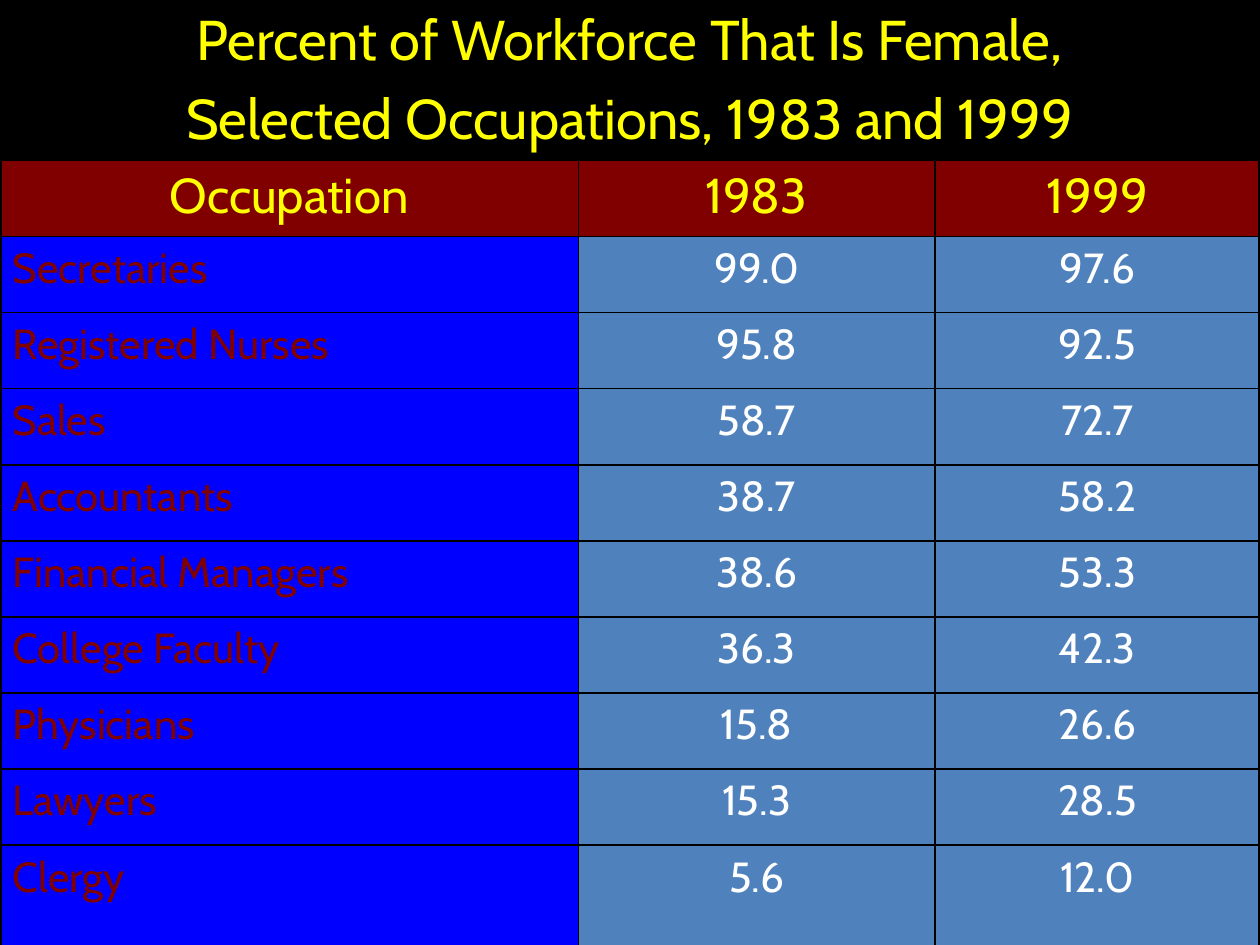
from lxml.etree import SubElement
from pptx import Presentation
from pptx.dml.color import RGBColor
from pptx.enum.text import PP_ALIGN
from pptx.oxml.ns import qn
from pptx.util import Inches, Pt

BLACK = RGBColor(0x00, 0x00, 0x00)
YELLOW = RGBColor(0xFF, 0xFF, 0x00)
MAROON = RGBColor(0x80, 0x00, 0x00)
BLUE = RGBColor(0x00, 0x00, 0xFF)
STEEL = RGBColor(0x4F, 0x81, 0xBD)
WHITE = RGBColor(0xFF, 0xFF, 0xFF)
FONT = "Cabin"
INNER, OUTER = Pt(1), Pt(2.25)

TITLE = ["Percent of Workforce That Is Female,", "Selected Occupations, 1983 and 1999"]
HEADINGS = ["Occupation", "1983", "1999"]
OCCUPATIONS = [
    ("Secretaries", "99.0", "97.6"),
    ("Registered Nurses", "95.8", "92.5"),
    ("Sales", "58.7", "72.7"),
    ("Accountants", "38.7", "58.2"),
    ("Financial Managers", "38.6", "53.3"),
    ("College Faculty", "36.3", "42.3"),
    ("Physicians", "15.8", "26.6"),
    ("Lawyers", "15.3", "28.5"),
    ("Clergy", "5.6", "12.0"),
]
COLUMN_SHARES = [0.459, 0.283, 0.258]
TITLE_SHARE, LAST_SHARE = 0.16, 0.11


def border_cell(cell, widths):
    """Draw black borders on a cell, with a width for each side."""
    properties = cell._tc.get_or_add_tcPr()
    for side, width in widths.items():
        line = SubElement(properties, qn(f"a:ln{side}"), w=str(width))
        SubElement(SubElement(line, qn("a:solidFill")), qn("a:srgbClr"), val=str(BLACK))


def write_cell(cell, lines, size, color, background, align=PP_ALIGN.CENTER):
    """Fill a cell and write its lines as spaced paragraphs."""
    cell.fill.solid()
    cell.fill.fore_color.rgb = background
    frame = cell.text_frame
    for number, line in enumerate(lines):
        paragraph = frame.add_paragraph() if number else frame.paragraphs[0]
        paragraph.alignment = align
        spacing = SubElement(paragraph._p.get_or_add_pPr(), qn("a:spcBef"))
        SubElement(spacing, qn("a:spcPct"), val="20000")
        run = paragraph.add_run()
        run.text = line
        run.font.name = FONT
        run.font.size = Pt(size)
        run.font.color.rgb = color


def size_grid(table, width, height):
    """Share the table's box among its columns and rows."""
    for column, share in zip(table.columns, COLUMN_SHARES):
        column.width = int(width * share)
    middle_share = (1 - TITLE_SHARE - LAST_SHARE) / (len(table.rows) - 2)
    shares = [TITLE_SHARE, *[middle_share] * (len(table.rows) - 2), LAST_SHARE]
    for row, share in zip(table.rows, shares):
        row.height = int(height * share)


def border_grid(table):
    """Rule the table with thin inner lines and a thick frame."""
    last_row, last_column = len(table.rows) - 1, len(table.columns) - 1
    for r in range(last_row + 1):
        for c in range(last_column + 1):
            border_cell(table.cell(r, c), {
                "L": INNER if c else OUTER,
                "R": OUTER if c == last_column else INNER,
                "T": INNER if r else OUTER,
                "B": OUTER if r == last_row else INNER,
            })


def add_workforce_table(slide, left, top, width, height):
    """Place the titled table of occupations in the given box."""
    table = slide.shapes.add_table(
        len(OCCUPATIONS) + 2, len(HEADINGS), left, top, width, height
    ).table
    size_grid(table, width, height)
    border_grid(table)
    title = table.cell(0, 0)
    title.merge(table.cell(0, len(HEADINGS) - 1))
    write_cell(title, TITLE, 32, YELLOW, BLACK)
    for c, heading in enumerate(HEADINGS):
        write_cell(table.cell(1, c), [heading], 28, YELLOW, MAROON)
    for r, (occupation, *percents) in enumerate(OCCUPATIONS, start=2):
        write_cell(table.cell(r, 0), [occupation], 24, MAROON, BLUE, PP_ALIGN.LEFT)
        for c, percent in enumerate(percents, start=1):
            write_cell(table.cell(r, c), [percent], 24, WHITE, STEEL)


def main():
    """Build and save the slide."""
    deck = Presentation()
    deck.slide_width, deck.slide_height = Inches(10), Inches(7.5)
    slide = deck.slides.add_slide(deck.slide_layouts[6])
    add_workforce_table(slide, 0, 0, deck.slide_width, Inches(7.45))
    deck.save("out.pptx")


if __name__ == "__main__":
    main()
